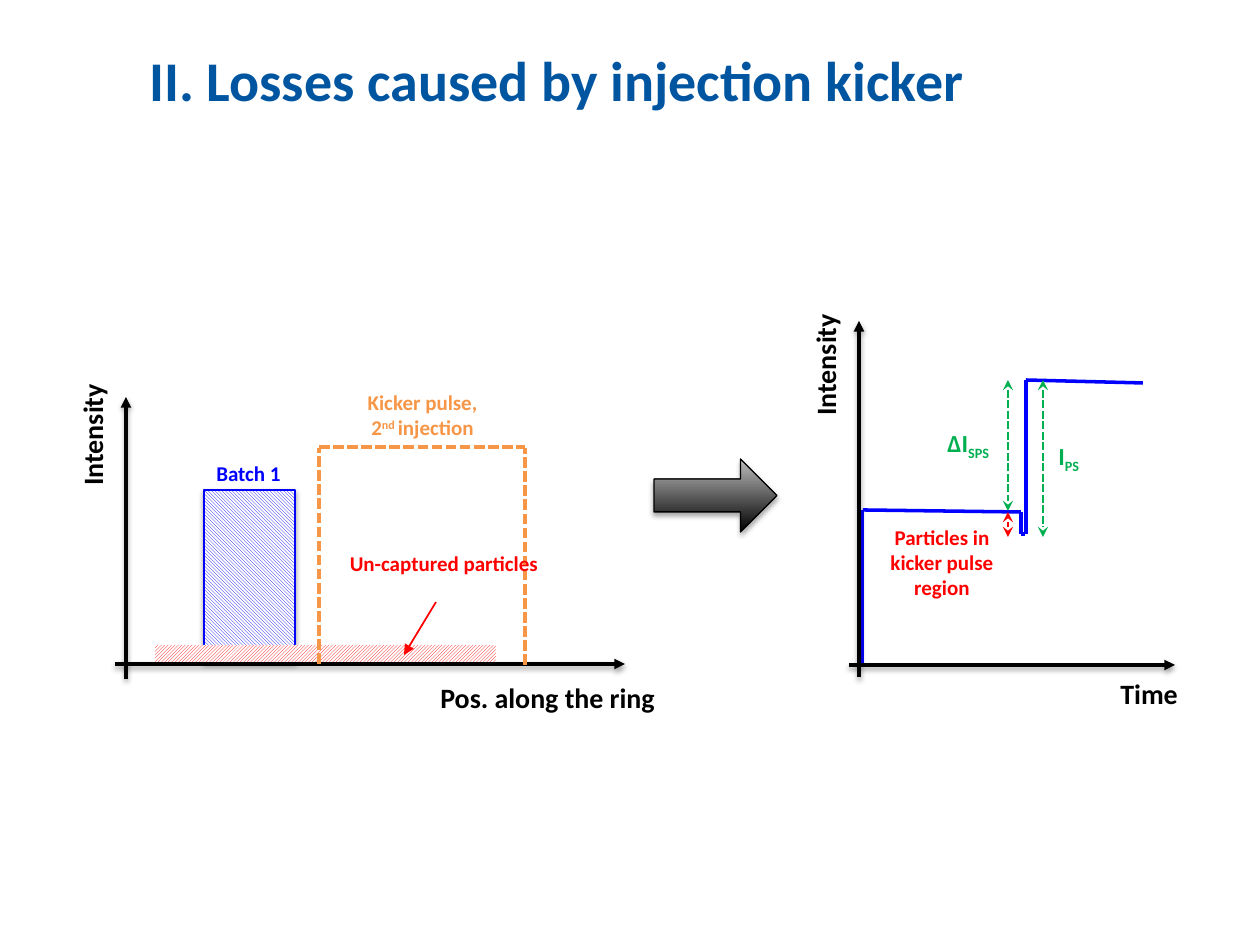
import pptx
import pptx.util
import pptx.dml.color
import pptx.enum.dml
import pptx.enum.shapes
import pptx.enum.text
import pptx.oxml
import pptx.oxml.ns

PX = 914400 // 126
FONT = "Calibri"
COLORS = {
    "title": "0055A0", "beam": "0000FF", "kicker": "F79646", "loss": "FF0000",
    "gain": "00B050", "axis": "000000", "paper": "FFFFFF", "shine": "BDBDBD",
}
PATTERN = pptx.enum.dml.MSO_PATTERN
ALIGN = pptx.enum.text.PP_ALIGN

BATCH = (204, 490, 91, 171)
UNCAPTURED = (155, 645, 341, 19)
BLOCK_ARROW = (654, 459, 123, 73)

SOLID = {"width": 2}
AXIS = {"width": 2, "tail": "triangle", "shadow": (38, 3.1, 1.6)}
PULSE = {"width": 2, "dashed": True}
SPAN = {"width": 1.5, "dashed": True, "head": "stealth", "tail": "stealth"}
LOSS_SPAN = {"width": 1.5, "head": "stealth", "tail": "stealth"}
POINTER = {"width": 1, "tail": "triangle"}

LINES = [
    ("kicker", PULSE, (319, 447), (525, 447)),
    ("axis", AXIS, (115, 664), (625, 664)),
    ("kicker", PULSE, (319, 664), (319, 448)),
    ("kicker", PULSE, (525, 665), (525, 448)),
    ("axis", AXIS, (126, 679), (126, 397)),
    ("loss", POINTER, (436, 602), (404, 655)),
    ("beam", SOLID, (863, 510), (1021, 512)),
    ("beam", SOLID, (1021, 512), (1021, 534)),
    ("beam", SOLID, (862, 510), (862, 664)),
    ("beam", SOLID, (1026, 380), (1026, 534)),
    ("beam", SOLID, (1025, 534), (1021, 534)),
    ("beam", SOLID, (1026, 380), (1143, 383)),
    ("gain", SPAN, (1008, 380), (1008, 511)),
    ("gain", SPAN, (1043, 380), (1043, 537)),
    ("axis", AXIS, (849, 665), (1175, 665)),
    ("axis", AXIS, (859, 677), (859, 321)),
    ("loss", LOSS_SPAN, (1008, 512), (1008, 537)),
]

TITLE = {"size": 32, "wrap": True}
AXIS_NAME = {"size": 16}
TURNED_NAME = {"size": 16, "rotation": 270}
TAG = {"size": 12}
CENTERED_TAG = {"size": 12, "align": ALIGN.CENTER}
WRAPPED_TAG = {"size": 12, "align": ALIGN.CENTER, "wrap": True}
SYMBOL = {"size": 14}

TEXTS = [
    ("title", TITLE, (137, 39, 1097, 102), [["II. Losses caused by injection kicker"]]),
    ("beam", TAG, (204, 454, 91, 38), [["Batch 1"]]),
    ("kicker", WRAPPED_TAG, (319, 383, 207, 63),
     [["Kicker pulse,"], ["2", ("nd ", 30), "injection"]]),
    ("axis", AXIS_NAME, (428, 674, 243, 47), [["Pos. along the ring"]]),
    ("axis", TURNED_NAME, (28, 410, 129, 47), [["Intensity"]]),
    ("loss", CENTERED_TAG, (336, 544, 216, 38), [["Un-captured particles"]]),
    ("gain", SYMBOL, (1046, 435, 49, 43), [["I", ("PS", -25)]]),
    ("gain", SYMBOL, (935, 422, 71, 43), [["ΔI", ("SPS", -25)]]),
    ("axis", AXIS_NAME, (1108, 670, 83, 47), [["Time"]]),
    ("axis", TURNED_NAME, (761, 340, 129, 47), [["Intensity"]]),
    ("loss", WRAPPED_TAG, (862, 518, 160, 89), [["Particles in kicker pulse region"]]),
]


def rgb(name):
    return pptx.dml.color.RGBColor.from_string(COLORS[name])


def scaled(lengths):
    return [length * PX for length in lengths]


def add_effects(item, shadow=None):
    effects = pptx.oxml.parse_xml(f'<a:effectLst {pptx.oxml.ns.nsdecls("a")}/>')
    if shadow:
        alpha, blur, distance = shadow
        effects.append(pptx.oxml.parse_xml(
            f'<a:outerShdw {pptx.oxml.ns.nsdecls("a")} blurRad="{round(blur * 12700)}" '
            f'dist="{round(distance * 12700)}" dir="5400000" rotWithShape="0">'
            f'<a:srgbClr val="{COLORS["axis"]}"><a:alpha val="{alpha * 1000}"/></a:srgbClr>'
            '</a:outerShdw>'))
    item._element.spPr.append(effects)


def add_block(page, kind, frame, line=None, width=0, shadow=None):
    block = page.shapes.add_shape(kind, *scaled(frame))
    if line:
        block.line.color.rgb = rgb(line)
        block.line.width = pptx.util.Pt(width)
    else:
        block.line.fill.background()
    add_effects(block, shadow)
    return block


def hatch(block, pattern, color):
    block.fill.patterned()
    block.fill.pattern = pattern
    block.fill.fore_color.rgb = rgb(color)
    block.fill.back_color.rgb = rgb("paper")


def add_line(page, color, start, end, width, dashed=False, head=None, tail=None, shadow=None):
    line = page.shapes.add_connector(
        pptx.enum.shapes.MSO_CONNECTOR.STRAIGHT, *scaled(start + end))
    line.line.color.rgb = rgb(color)
    line.line.width = pptx.util.Pt(width)
    if dashed:
        line.line.dash_style = pptx.enum.dml.MSO_LINE.SQUARE_DOT
    for tag, arrow in (("headEnd", head), ("tailEnd", tail)):
        if arrow:
            line.line._get_or_add_ln().append(pptx.oxml.parse_xml(
                f'<a:{tag} {pptx.oxml.ns.nsdecls("a")} type="{arrow}"/>'))
    add_effects(line, shadow)


def add_text(page, color, frame, paragraphs, size, wrap=False, align=ALIGN.LEFT, rotation=0):
    box = page.shapes.add_textbox(*scaled(frame))
    box.rotation = rotation
    box.text_frame.word_wrap = wrap
    for index, parts in enumerate(paragraphs):
        para = box.text_frame.add_paragraph() if index else box.text_frame.paragraphs[0]
        para.alignment = align
        para.font.name = FONT
        para.font.size = pptx.util.Pt(size)
        para.font.bold = True
        para.font.color.rgb = rgb(color)
        for part in parts:
            words, baseline = (part, 0) if isinstance(part, str) else part
            span = para.add_run()
            span.text = words
            if baseline:
                span._r.get_or_add_rPr().set("baseline", str(baseline * 1000))


def main():
    deck = pptx.Presentation()
    deck.slide_width, deck.slide_height = scaled((1260, 945))
    page = deck.slides.add_slide(deck.slide_layouts[6])
    kinds = pptx.enum.shapes.MSO_SHAPE
    soft = (35, 3.1, 1.8)

    batch = add_block(page, kinds.RECTANGLE, BATCH, "beam", 1.5, soft)
    hatch(batch, PATTERN.LIGHT_DOWNWARD_DIAGONAL, "beam")
    uncaptured = add_block(page, kinds.RECTANGLE, UNCAPTURED)
    hatch(uncaptured, PATTERN.LIGHT_UPWARD_DIAGONAL, "loss")

    arrow = add_block(page, kinds.RIGHT_ARROW, BLOCK_ARROW, "axis", 0.75, soft)
    arrow.adjustments[0] = 0.45
    arrow.fill.gradient()
    arrow.fill.gradient_angle = 90
    for stop, color in zip(arrow.fill.gradient_stops, ("axis", "shine")):
        stop.color.rgb = rgb(color)

    for color, style, start, end in LINES:
        add_line(page, color, start, end, **style)
    for color, style, frame, paragraphs in TEXTS:
        add_text(page, color, frame, paragraphs, **style)
    deck.save("out.pptx")


if __name__ == "__main__":
    main()
